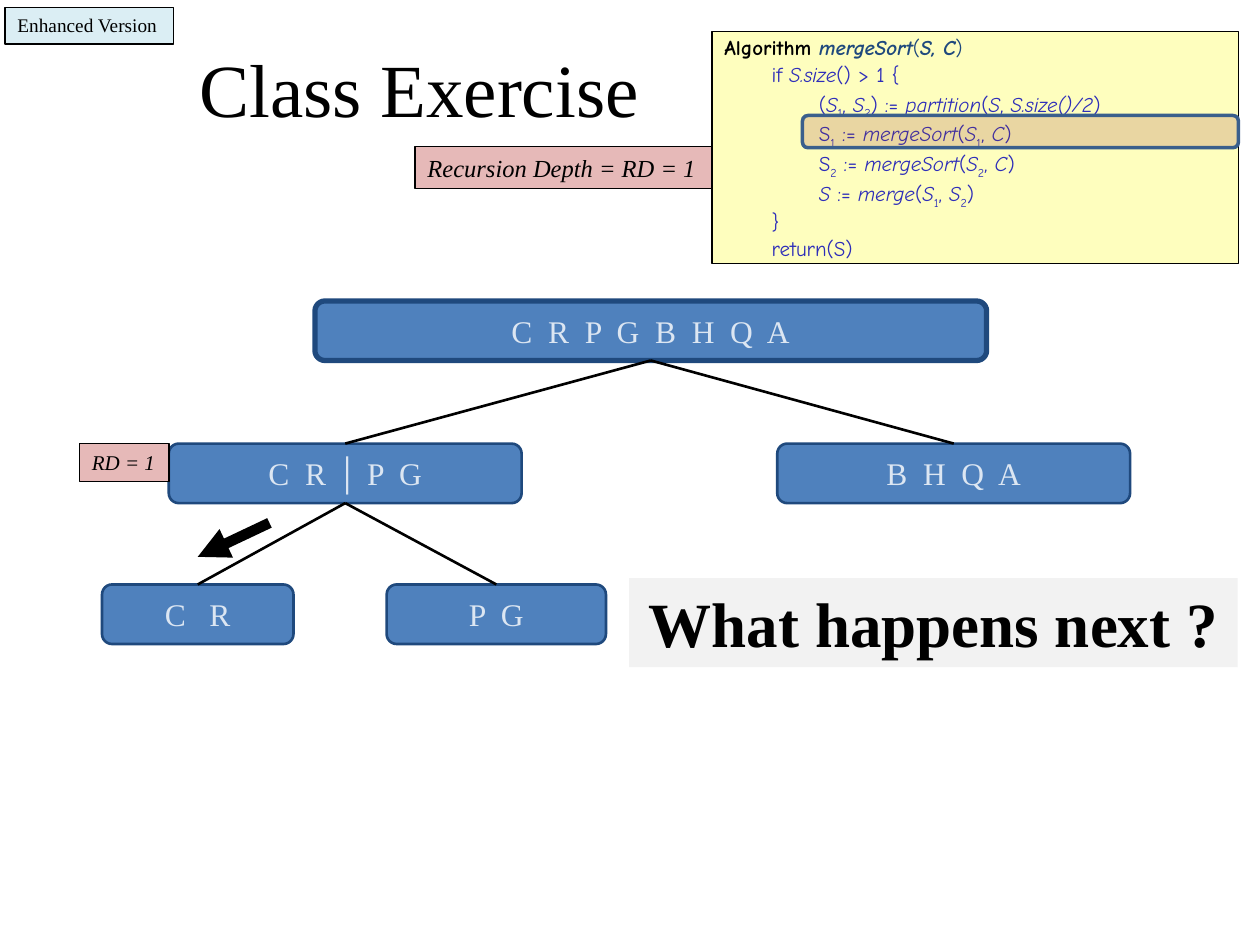
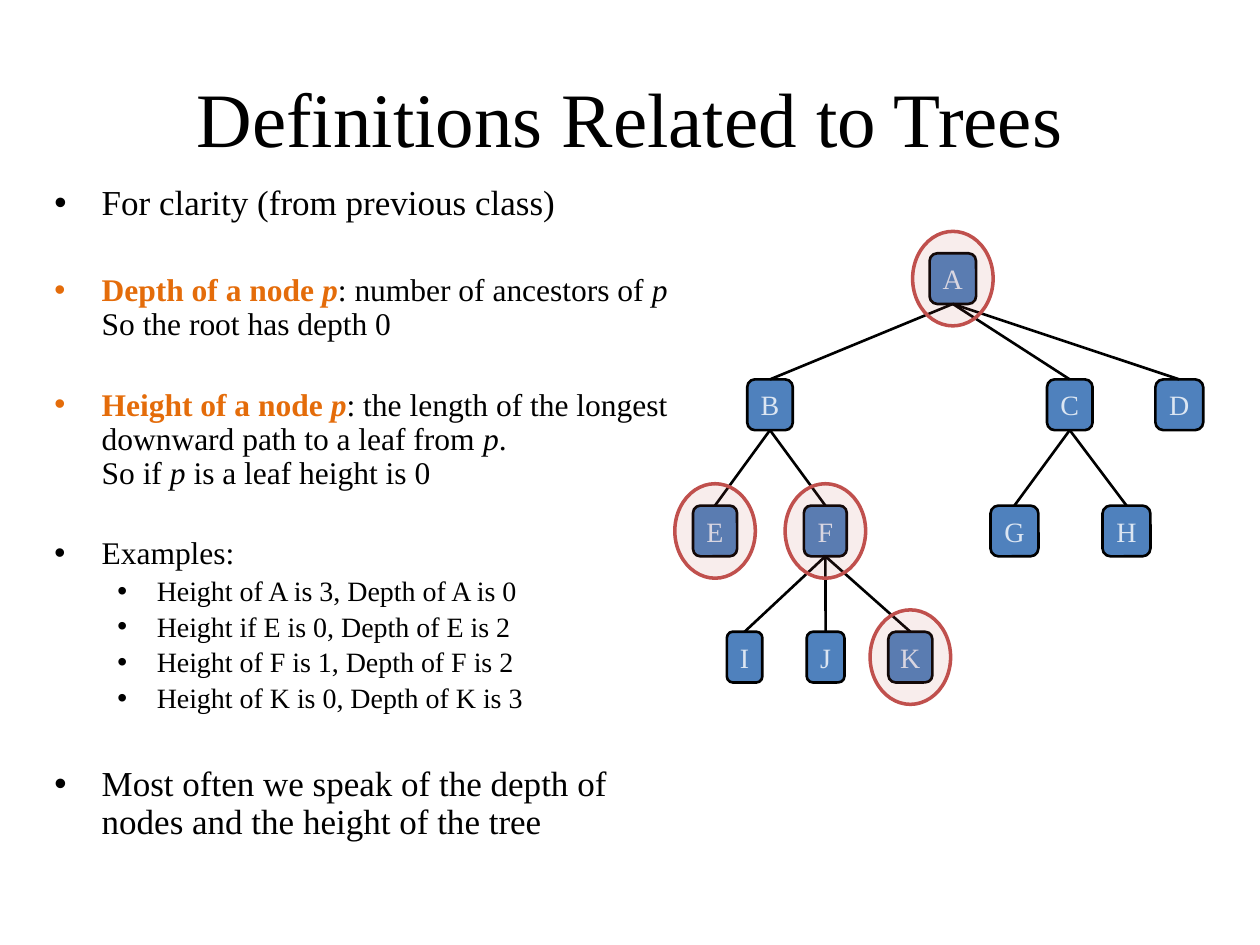
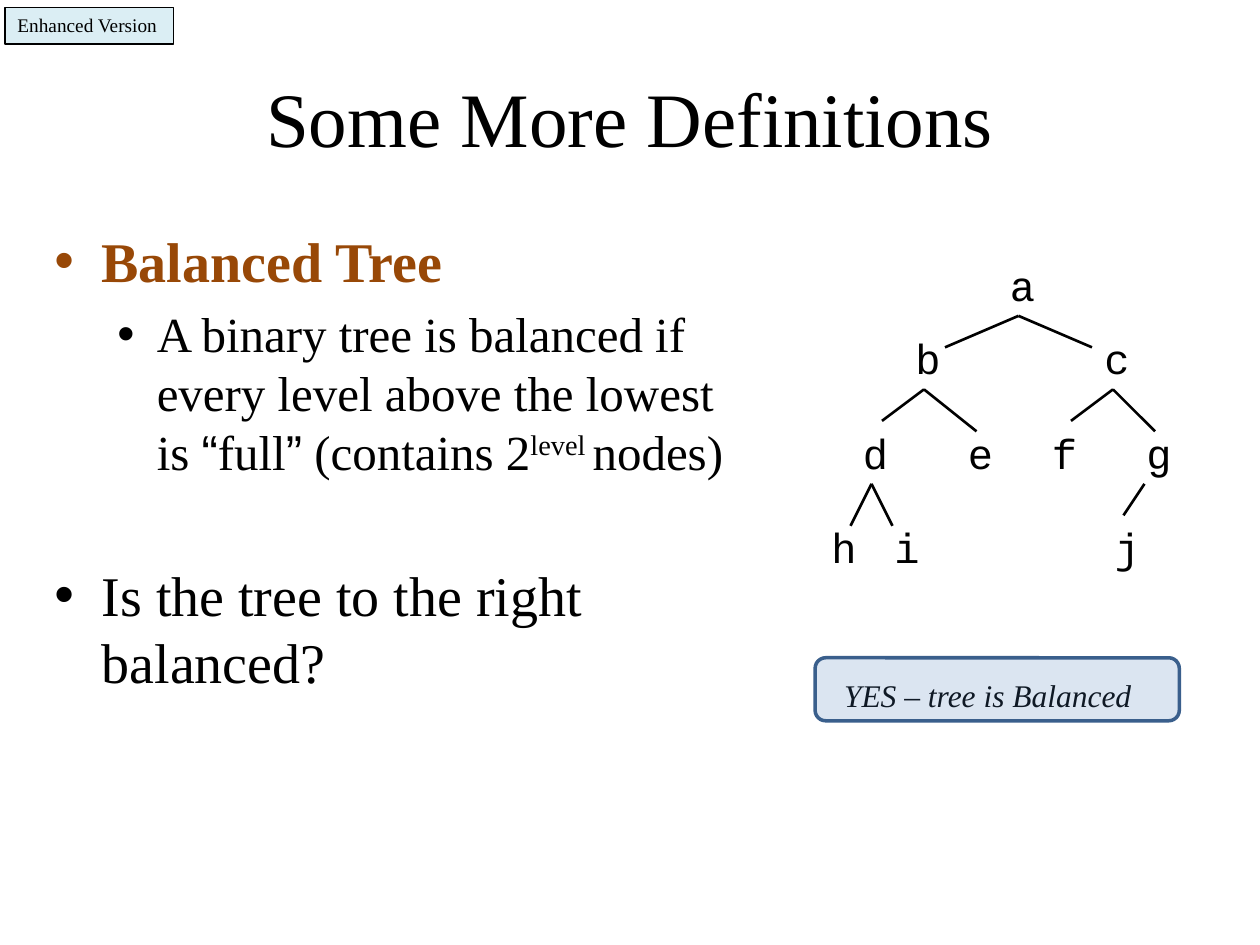
from lxml.etree import SubElement as Sub
from pptx import Presentation
from pptx.dml.color import RGBColor as Rgb
from pptx.enum.shapes import MSO_CONNECTOR as Conn, MSO_SHAPE as Kind
from pptx.enum.text import MSO_ANCHOR as Anchor, PP_ALIGN as Align
from pptx.oxml.ns import qn
from pptx.util import Pt

SERIF, SANS, MONO, COMIC = "Times New Roman", "Arial", "Courier New", "Comic Neue"
BLACK, BLUE, NAVY, PALE = "000000", "4F81BD", "1F497D", "DCE6F2"
PINK, AQUA, RED, STEEL = "E6B9B8", "DBEEF4", "C0504D", "3A5F8C"
CODE, ORANGE, BROWN = "2D2DB9", "E46C0A", "984807"
MARKS = "*~_^@`"


def color(code):
    return Rgb.from_string(code)


def split(text):
    """Yield (piece, active marks): * bold, ~ italic, _ sub, ^ super, @ sans, ` tint."""
    on, piece = set(), ""
    for char in text:
        if char in MARKS or char == "\n":
            if piece:
                yield piece, set(on)
            piece = ""
            if char == "\n":
                yield char, set(on)
            else:
                on ^= {char}
        else:
            piece += char
    if piece:
        yield piece, on


def write(para, text, size=18, face=SERIF, ink=BLACK, tint=BLACK, bold=False,
          slant=False, align=Align.LEFT, space=0, lead=1.0, left=0, hang=0, gap=0):
    """Fill a paragraph with marked text; a hang makes it a bullet item."""
    para.alignment = align
    para.space_before, para.line_spacing = Pt(space), lead
    props = para._p.get_or_add_pPr()
    props.set("marL", str(Pt(left)))
    props.set("indent", str(Pt(-hang)))
    if hang:
        Sub(props, qn("a:buFont"), typeface=SANS)
        Sub(props, qn("a:buChar"), char="•")
    for piece, on in split(text):
        if piece == "\n":
            para.add_line_break()
            continue
        run = para.add_run()
        run.text, font = piece, run.font
        font.size, font.name = Pt(size), SANS if "@" in on else face
        font.bold, font.italic = bold or "*" in on, slant or "~" in on
        font.color.rgb = color(tint if "`" in on else ink)
        base = -25000 if "_" in on else 30000 if "^" in on else 0
        if base:
            run._r.get_or_add_rPr().set("baseline", str(base))
        if gap and "@" not in on:
            run._r.get_or_add_rPr().set("spc", str(round(gap * 100)))


class Deck:
    def __init__(self):
        self.prs = Presentation()
        self.prs.slide_width, self.prs.slide_height = Pt(720), Pt(540)
        self.shapes = None

    def page(self):
        self.shapes = self.prs.slides.add_slide(self.prs.slide_layouts[6]).shapes

    def fill(self, shape, items, anchor=Anchor.TOP, wrap=True, **base):
        """Write items, each a text or a (text, format) pair, into a shape."""
        frame = shape.text_frame
        frame.word_wrap, frame.vertical_anchor = wrap, anchor
        for num, item in enumerate(items):
            text, own = (item, {}) if isinstance(item, str) else item
            para = frame.add_paragraph() if num else frame.paragraphs[0]
            write(para, text, **{**base, **own})

    def text(self, box, *items, **fmt):
        self.fill(self.shapes.add_textbox(*map(Pt, box)), items, **fmt)

    def shape(self, kind, box, fill, edge=None, width=0.75, alpha=None):
        shape = self.shapes.add_shape(kind, *map(Pt, box))
        shape.shadow.inherit = False
        shape.fill.solid()
        shape.fill.fore_color.rgb = color(fill)
        if alpha:
            tone = shape.fill._xPr.find(".//" + qn("a:srgbClr"))
            Sub(tone, qn("a:alpha"), val=str(alpha * 1000))
        if edge:
            shape.line.color.rgb, shape.line.width = color(edge), Pt(width)
        else:
            shape.line.fill.background()
        return shape

    def title(self, text, box=(36, 21.6, 648, 90), size=44):
        self.text(box, text, size=size, anchor=Anchor.MIDDLE, align=Align.CENTER)

    def label(self, box, text, fill, **fmt):
        self.fill(self.shape(Kind.RECTANGLE, box, fill, BLACK), [text], wrap=False, **fmt)

    def badge(self):
        self.label((2.9, 4.3, 96.5, 20.9), "Enhanced Version", AQUA, size=11)

    def node(self, box, text, edge=NAVY, width=1.5, **fmt):
        node = self.shape(Kind.ROUNDED_RECTANGLE, box, BLUE, edge, width)
        self.fill(node, [text], anchor=Anchor.MIDDLE, wrap=False, ink=PALE,
                  align=Align.CENTER, **fmt)
        return node

    def glass(self, box, fill):
        self.shape(Kind.ROUNDED_RECTANGLE, box, fill, STEEL, 2, alpha=20)

    def ring(self, node):
        wide, high = Pt(46), Pt(54)
        x = node.left + (node.width - wide) // 2
        y = node.top + (node.height - high) // 2
        self.shape(Kind.OVAL, (x.pt if hasattr(x, "pt") else x / 12700, y / 12700, 46, 54),
                   RED, RED, 2, alpha=10)

    def line(self, start, end, width=1.5, arrow=False):
        line = self.shapes.add_connector(Conn.STRAIGHT, *map(Pt, (*start, *end)))
        line.line.color.rgb, line.line.width = color(BLACK), Pt(width)
        if arrow:
            Sub(line.line._get_or_add_ln(), qn("a:tailEnd"), type="triangle")
        Sub(line._element.spPr, qn("a:effectLst"))
        return line

    def link(self, top, *kids):
        for kid in kids:
            line = self.line((0, 0), (0, 0))
            line.begin_connect(top, 2)
            line.end_connect(kid, 0)


def sort(deck):
    deck.page()
    row, high = 253.5, 34
    left = deck.node((96.5, row, 201.6, high), "C R@ *│* @P G", gap=2.25)
    right = deck.node((444.2, row, 201.6, high), "B H Q A", gap=2.25)
    low = deck.node((58.3, 334, 109.4, high), "C R", gap=4.5)
    last = deck.node((221, 334, 125.3, high), "P G", gap=2.25)
    root = deck.node((180, 172, 383.8, high), "C R P G B H Q A", width=3, gap=2.25)
    deck.link(left, low, last)
    deck.link(root, left, right)
    deck.title("Class Exercise", (36, 21.6, 406.8, 56.2), 42.9)

    one, two = {"left": 27}, {"left": 54}
    panel = deck.shape(Kind.RECTANGLE, (406.8, 18, 301, 132.5), "FEFEBE", BLACK)
    deck.fill(panel, [
        ("*Algorithm `~mergeSort~*(*~S, C~*)`", {"ink": BLACK, "tint": NAVY}),
        ("if ~S.size~() > 1 {", one),
        ("(~S~_1_, ~S~_2_) := ~partition~(~S~, ~S.size()/2~)", two),
        ("S_1_ := ~mergeSort~(~S~_1_,~ C~)", two),
        ("S_2_ := ~mergeSort~(~S~_2_,~ C~)", two),
        ("~S~ := ~merge~(~S~_1_,~ S~_2_)", two),
        ("}", one),
        ("return(S)", one),
    ], size=12, face=COMIC, ink=CODE, lead=0.9, space=2.4)
    deck.glass((458.6, 66, 249.1, 18.4), "953735")
    deck.line((154, 298.8), (113, 318.2), 6, arrow=True)
    deck.label((237.2, 83.7, 169.4, 24.2), "Recursion Depth = RD = 1", PINK,
               size=14, slant=True)
    deck.label((45.4, 253.4, 51.1, 21.8), "RD = 1", PINK, size=12, slant=True)
    deck.badge()
    query = deck.shape(Kind.RECTANGLE, (359.5, 330.3, 347.8, 51), "F2F2F2")
    deck.fill(query, ["What happens next ?"], size=36, bold=True, align=Align.CENTER)


def trees(deck):
    deck.page()
    deck.title("Definitions Related to Trees")
    sub = {"left": 58.5, "hang": 22.5, "size": 16, "space": 3.2}
    term = {"ink": BLACK, "tint": ORANGE}
    deck.text(
        (24, 102.4, 369.4, 391.7),
        ("For clarity (from previous class)", {"size": 20, "space": 4}),
        ("`*Depth of a node ~p~*`: number of ancestors of ~p~\nSo the root has depth 0",
         {**term, "space": 29.2}),
        ("`*Height of a node ~p~*`: the length of the longest downward path to a leaf "
         "from ~p~.\nSo if ~p~ is a leaf height is 0", {**term, "space": 26.6}),
        ("Examples:", {"space": 26.6}),
        ("Height of A is 3, Depth of A is 0", sub),
        ("Height if E is 0, Depth of E is 2", sub),
        ("Height of F is 1, Depth of F is 2", sub),
        ("Height of K is 0, Depth of K is 3", sub),
        ("Most often we speak of the depth of nodes and the height of the tree",
         {"size": 20, "space": 29.6}),
        left=27, hang=27, lead=0.9)

    spots = {"A": (531.2, 0, 26.6), "B": (427, 1, 26), "C": (598.3, 1, 26),
             "D": (660.2, 1, 27.4), "E": (396, 2, 25.2), "F": (459.4, 2, 24.5),
             "G": (566, 2, 27.4), "H": (630, 2, 27.4), "I": (415.4, 3, 20.2),
             "J": (461, 3, 21.6), "K": (507.6, 3, 25.2)}
    nodes = {name: deck.node((x, 144.7 + 72.1 * row, wide, 29), name, BLACK, size=16)
             for name, (x, row, wide) in spots.items()}
    for top, kids in {"A": "BCD", "B": "EF", "C": "GH", "F": "IJK"}.items():
        deck.link(nodes[top], *(nodes[kid] for kid in kids))
    for name in "AEFK":
        deck.ring(nodes[name])


def more(deck):
    deck.page()
    deck.title("Some More Definitions")
    deck.text(
        (24, 126, 408, 356.4),
        ("Balanced Tree", {"ink": BROWN, "bold": True}),
        ("A binary tree is balanced if every level above the lowest is @“@full@”@ "
         "(contains 2^level ^nodes)",
         {"size": 28, "space": 5.6, "left": 58.5, "hang": 22.5}),
        ("Is the tree to the right balanced?", {"space": 45.6}),
        size=32, space=6.4, left=27, hang=27)

    rows = {145: {"a": 570}, 186.5: {"b": 516, "c": 624},
            240.5: {"d": 486, "e": 546, "f": 594, "g": 648},
            294.5: {"h": 468, "i": 504, "j": 630}}
    for y, names in rows.items():
        for name, x in names.items():
            deck.text((x, y, 30, 36), name, size=24, face=MONO, space=3.5)
    forks = {(582, 180.5): [(540, 198.5), (624, 198.5)],
             (528, 222.5): [(504, 240.5), (558, 246.5)],
             (636, 222.5): [(612, 240.5), (660, 246.5)],
             (498, 276.5): [(486, 300.5), (510, 300.5)],
             (654, 276.5): [(642, 294.5)]}
    for top, ends in forks.items():
        for end in ends:
            deck.line(top, end)
    deck.text((475.2, 383, 180.7, 28.8), "YES – tree is Balanced", slant=True, wrap=False)
    deck.glass((465.8, 375.9, 208.1, 36), BLUE)
    deck.badge()


def main():
    deck = Deck()
    for build in (sort, trees, more):
        build(deck)
    deck.prs.save("out.pptx")


if __name__ == "__main__":
    main()
